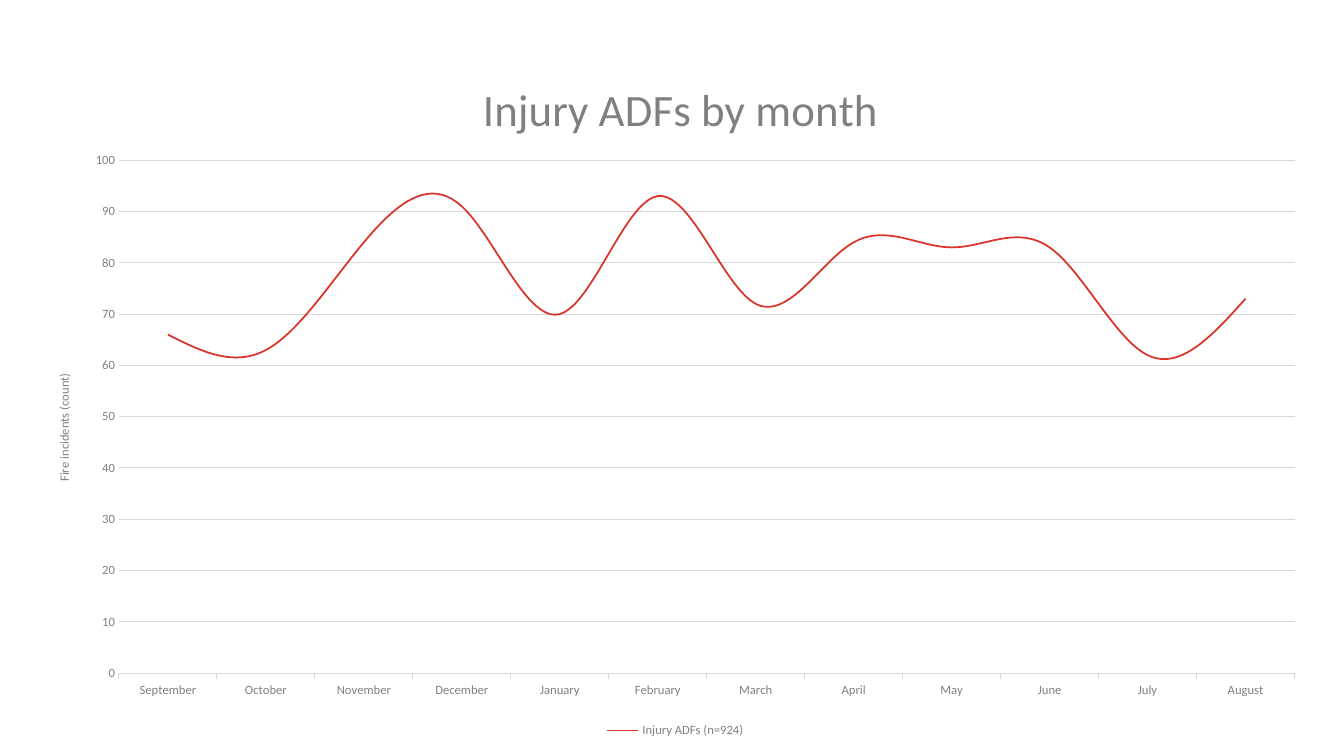
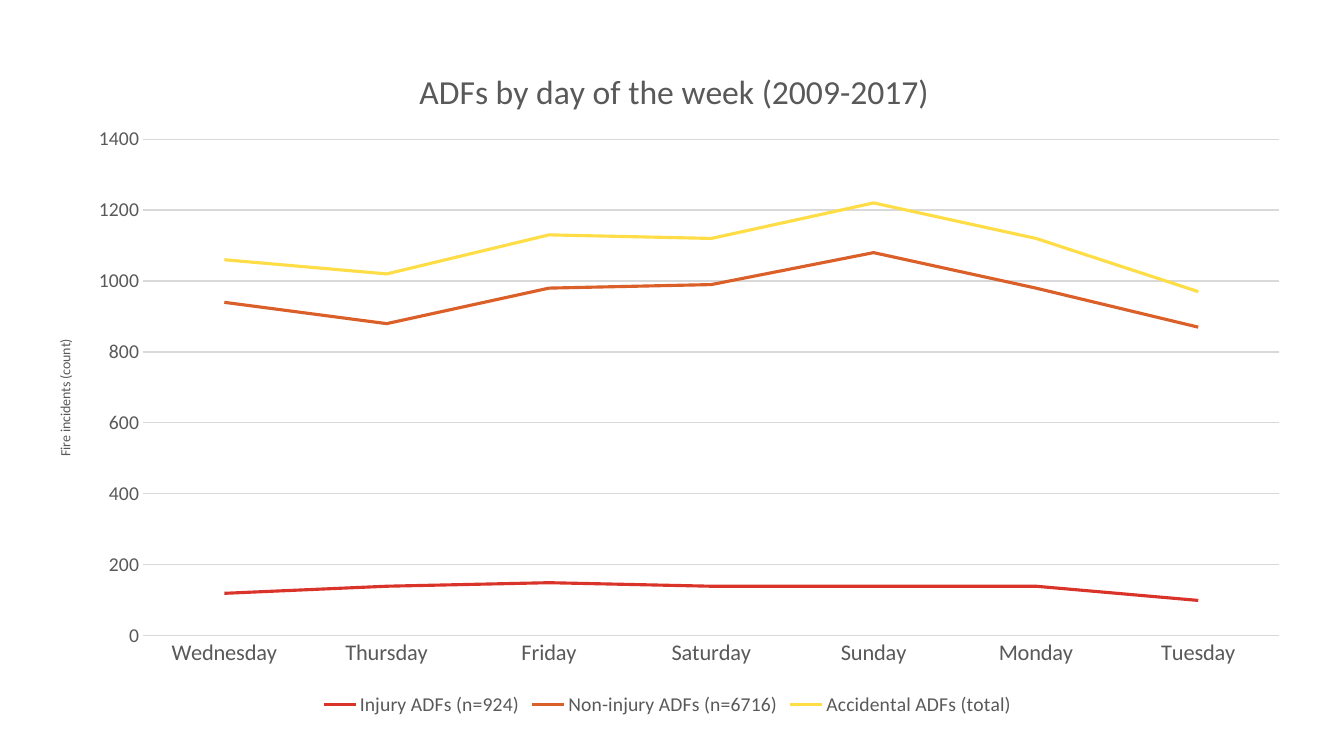
from lxml import etree
from pptx import Presentation
from pptx.chart.data import CategoryChartData
from pptx.dml.color import RGBColor
from pptx.enum.chart import XL_CHART_TYPE, XL_LEGEND_POSITION, XL_TICK_MARK
from pptx.oxml.ns import qn
from pptx.util import Inches, Pt

COLORS = {
    "gray": "808080",
    "dark": "595959",
    "grid": "D9D9D9",
    "injury": "DA342A",
    "non_injury": "DB5F29",
    "total": "FEDD47",
}
TEXT_FORMAT = {"name": "Calibri", "bold": False}
COUNT_LABEL = "Fire incidents (count)"

MONTHLY = {
    "kind": XL_CHART_TYPE.LINE_STACKED,
    "title": "Injury ADFs by month",
    "frame": (0.3, 0.36, 12.79, 7),
    "plot": (1.18, 1.59, 11.66, 5.09),
    "title_at": (4.71, 0.69),
    "count_at": (0.53, 3.68),
    "sizes": {"title": 32, "count": 9, "category": 9, "value": 9, "legend": 9},
    "text": "gray",
    "ticks": XL_TICK_MARK.OUTSIDE,
    "scale": {"minimum_scale": 0, "maximum_scale": 100, "major_unit": 10},
    "line_width": 1.25,
    "smooth": True,
    "categories": ["September", "October", "November", "December", "January", "February",
                   "March", "April", "May", "June", "July", "August"],
    "series": [
        ("Injury ADFs (n=924)", "injury", [66, 63, 84, 91, 70, 93, 72, 84, 83, 83, 62, 73]),
    ],
}
WEEKLY = {
    "kind": XL_CHART_TYPE.LINE,
    "title": "ADFs by day of the week (2009-2017)",
    "frame": (0.3, 0.33, 12.64, 6.82),
    "plot": (1.42, 1.38, 11.27, 4.93),
    "title_at": (4.1, 0.62),
    "count_at": (0.53, 3.34),
    "sizes": {"title": 24, "count": 10, "category": 16, "value": 14, "legend": 14},
    "text": "dark",
    "ticks": XL_TICK_MARK.NONE,
    "scale": {"minimum_scale": 0, "maximum_scale": 1400, "major_unit": 200},
    "line_width": 2.25,
    "smooth": False,
    "categories": ["Wednesday", "Thursday", "Friday", "Saturday", "Sunday", "Monday", "Tuesday"],
    "series": [
        ("Injury ADFs (n=924)", "injury", [120, 140, 150, 140, 140, 140, 100]),
        ("Non-injury ADFs (n=6716)", "non_injury", [940, 880, 980, 990, 1080, 980, 870]),
        ("Accidental ADFs (total)", "total", [1060, 1020, 1130, 1120, 1220, 1120, 970]),
    ],
}


def set_all(target, values):
    for name, value in values.items():
        setattr(target, name, value)


def style_font(font, size, color):
    set_all(font, {**TEXT_FORMAT, "size": Pt(size)})
    font.color.rgb = RGBColor.from_string(COLORS[color])


def style_line(line, width, color):
    line.width = Pt(width)
    line.color.rgb = RGBColor.from_string(COLORS[color])


def write_title(title, text, size, color):
    run = title.text_frame.paragraphs[0].add_run()
    run.text = text
    style_font(run.font, size, color)


def place(chart, query, frame, box):
    part = chart._chartSpace.xpath(query)[0]
    for previous in part.findall(qn("c:layout")):
        part.remove(previous)
    layout = etree.Element(qn("c:layout"))
    manual = etree.SubElement(layout, qn("c:manualLayout"))
    left, top, width, height = frame
    values = {"xMode": "edge", "yMode": "edge",
              "x": (box[0] - left) / width, "y": (box[1] - top) / height}
    if len(box) == 4:
        values = {"layoutTarget": "inner", **values,
                  "w": box[2] / width, "h": box[3] / height}
    for tag, value in values.items():
        etree.SubElement(manual, qn(f"c:{tag}")).set("val", str(value))
    text = part.find(qn("c:tx"))
    part.insert(0 if text is None else 1, layout)


def style_axes(chart, content):
    sizes, color = content["sizes"], content["text"]
    months_or_days, counts = chart.category_axis, chart.value_axis
    for axis, size in ((months_or_days, sizes["category"]), (counts, sizes["value"])):
        axis.minor_tick_mark = XL_TICK_MARK.NONE
        style_font(axis.tick_labels.font, size, color)
    months_or_days.major_tick_mark = content["ticks"]
    style_line(months_or_days.format.line, 0.75, "grid")
    set_all(counts, {**content["scale"], "major_tick_mark": XL_TICK_MARK.NONE,
                     "has_major_gridlines": True})
    counts.format.line.fill.background()
    style_line(counts.major_gridlines.format.line, 0.75, "grid")
    write_title(counts.axis_title, COUNT_LABEL, sizes["count"], color)


def add_line_chart(slide, content):
    data = CategoryChartData()
    data.categories = content["categories"]
    for name, _, values in content["series"]:
        data.add_series(name, values)
    frame, sizes, color = content["frame"], content["sizes"], content["text"]
    chart = slide.shapes.add_chart(
        content["kind"], *[Inches(length) for length in frame], data).chart
    style_font(chart.font, 10, color)
    write_title(chart.chart_title, content["title"], sizes["title"], color)
    style_axes(chart, content)
    chart.has_legend = True
    set_all(chart.legend, {"position": XL_LEGEND_POSITION.BOTTOM, "include_in_layout": False})
    style_font(chart.legend.font, sizes["legend"], color)
    chart.plots[0].vary_by_categories = False
    for series, (_, series_color, _) in zip(chart.plots[0].series, content["series"]):
        series.smooth = content["smooth"]
        style_line(series.format.line, content["line_width"], series_color)
    for query, box in (("c:chart/c:title", "title_at"), ("c:chart/c:plotArea", "plot"),
                       ("c:chart/c:plotArea/c:valAx/c:title", "count_at")):
        place(chart, query, frame, content[box])


def main():
    deck = Presentation()
    set_all(deck, {"slide_width": Inches(13.33), "slide_height": Inches(7.5)})
    for content in (MONTHLY, WEEKLY):
        add_line_chart(deck.slides.add_slide(deck.slide_layouts[6]), content)
    deck.save("out.pptx")


if __name__ == "__main__":
    main()
